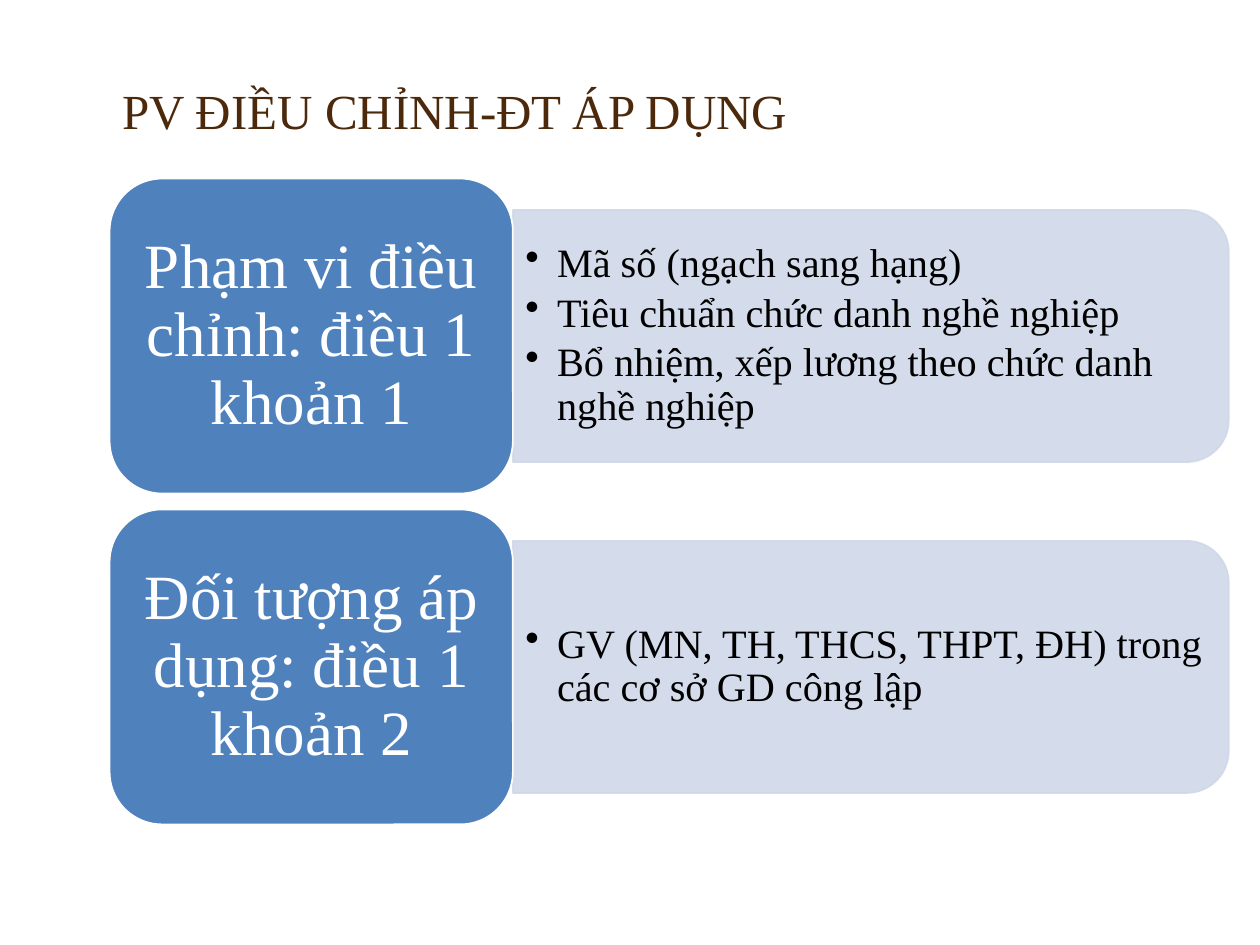
from dataclasses import dataclass

from lxml.etree import SubElement
from pptx import Presentation
from pptx.dml.color import RGBColor
from pptx.enum.shapes import MSO_SHAPE
from pptx.enum.text import MSO_ANCHOR, PP_ALIGN
from pptx.oxml.ns import qn
from pptx.util import Cm, Pt

BROWN = RGBColor(0x4D, 0x29, 0x0B)
BLUE = RGBColor(0x4F, 0x81, 0xBD)
PALE = RGBColor(0xD0, 0xD8, 0xE8)
WHITE = RGBColor(0xFF, 0xFF, 0xFF)
BLACK = RGBColor(0x00, 0x00, 0x00)

LEFT, TOP, PITCH = 2.21, 3.6, 6.67
LABEL_W, LABEL_H = 8.13, 6.35
PANEL_W, PANEL_H = 14.43, 5.08
LABEL_PAD = 0.32
POINT_W, POINT_H = 14.17, 4.57


@dataclass
class Row:
    label: str
    points: list[str]


ROWS = [
    Row("Phạm vi điều chỉnh: điều 1 khoản 1",
        ["Mã số (ngạch sang hạng)",
         "Tiêu chuẩn chức danh nghề nghiệp",
         "Bổ nhiệm, xếp lương theo chức danh nghề nghiệp"]),
    Row("Đối tượng áp dụng: điều 1 khoản 2",
        ["GV (MN, TH, THCS, THPT, ĐH) trong các cơ sở GD công lập"]),
]


def write(frame, lines: list[str], *, size: float, color: RGBColor,
          align=PP_ALIGN.LEFT, anchor=MSO_ANCHOR.MIDDLE,
          inset: tuple[float, float] = (0.25, 0.13),
          gap: float = 0, bullet: bool = False) -> None:
    frame.word_wrap = True
    frame.vertical_anchor = anchor
    frame.margin_left = frame.margin_right = Cm(inset[0])
    frame.margin_top = frame.margin_bottom = Cm(inset[1])
    for i, line in enumerate(lines):
        para = frame.add_paragraph() if i else frame.paragraphs[0]
        para.alignment = align
        para.line_spacing = 0.9
        para.space_before = Pt(gap if i else 0)
        if bullet:
            props = para._p.get_or_add_pPr()
            props.set("marL", str(Cm(0.64)))
            props.set("indent", str(-Cm(0.64)))
            SubElement(props, qn("a:buChar"), char="•")
        run = para.add_run()
        run.text = line
        run.font.name = "Times New Roman"
        run.font.size = Pt(size)
        run.font.color.rgb = color


def add_box(slide, left: float, top: float, width: float, height: float):
    return slide.shapes.add_textbox(
        Cm(left), Cm(top), Cm(width), Cm(height)).text_frame


def add_block(slide, kind, left: float, top: float, width: float,
              height: float, fill: RGBColor, line: RGBColor):
    shape = slide.shapes.add_shape(
        kind, Cm(left), Cm(top), Cm(width), Cm(height))
    shape.shadow.inherit = False
    shape.fill.solid()
    shape.fill.fore_color.rgb = fill
    shape.line.color.rgb = line
    shape.line.width = Pt(1)
    return shape


def add_panel(slide, left: float, mid: float) -> None:
    panel = add_block(slide, MSO_SHAPE.ROUND_2_SAME_RECTANGLE,
                      left + (PANEL_W - PANEL_H) / 2, mid - PANEL_W / 2,
                      PANEL_H, PANEL_W, PALE, PALE)
    panel.rotation = 90
    for color in panel._element.spPr.iter(qn("a:srgbClr")):
        SubElement(color, qn("a:alpha"), val="90000")


def add_row(slide, row: Row, top: float) -> None:
    mid = top + LABEL_H / 2
    right = LEFT + LABEL_W
    add_panel(slide, right, mid)
    write(add_box(slide, right, mid - POINT_H / 2, POINT_W, POINT_H),
          row.points, size=23, color=BLACK, gap=3.5, bullet=True)
    add_block(slide, MSO_SHAPE.ROUNDED_RECTANGLE, LEFT, top,
              LABEL_W, LABEL_H, BLUE, WHITE)
    write(add_box(slide, LEFT + LABEL_PAD, top + LABEL_PAD,
                  LABEL_W - 2 * LABEL_PAD, LABEL_H - 2 * LABEL_PAD),
          [row.label], size=36, color=WHITE, align=PP_ALIGN.CENTER,
          inset=(0.38, 0.19))


def main() -> None:
    deck = Presentation()
    deck.slide_width, deck.slide_height = Cm(25.4), Cm(19.05)
    slide = deck.slides.add_slide(deck.slide_layouts[5])
    title = slide.shapes.title
    title.left, title.top = Cm(LEFT), Cm(0.84)
    title.width, title.height = Cm(20.96), Cm(2.11)
    write(title.text_frame, ["PV ĐIỀU CHỈNH-ĐT ÁP DỤNG"], size=28,
          color=BROWN, anchor=MSO_ANCHOR.BOTTOM)
    for i, row in enumerate(ROWS):
        add_row(slide, row, TOP + i * PITCH)
    deck.save("out.pptx")


if __name__ == "__main__":
    main()
